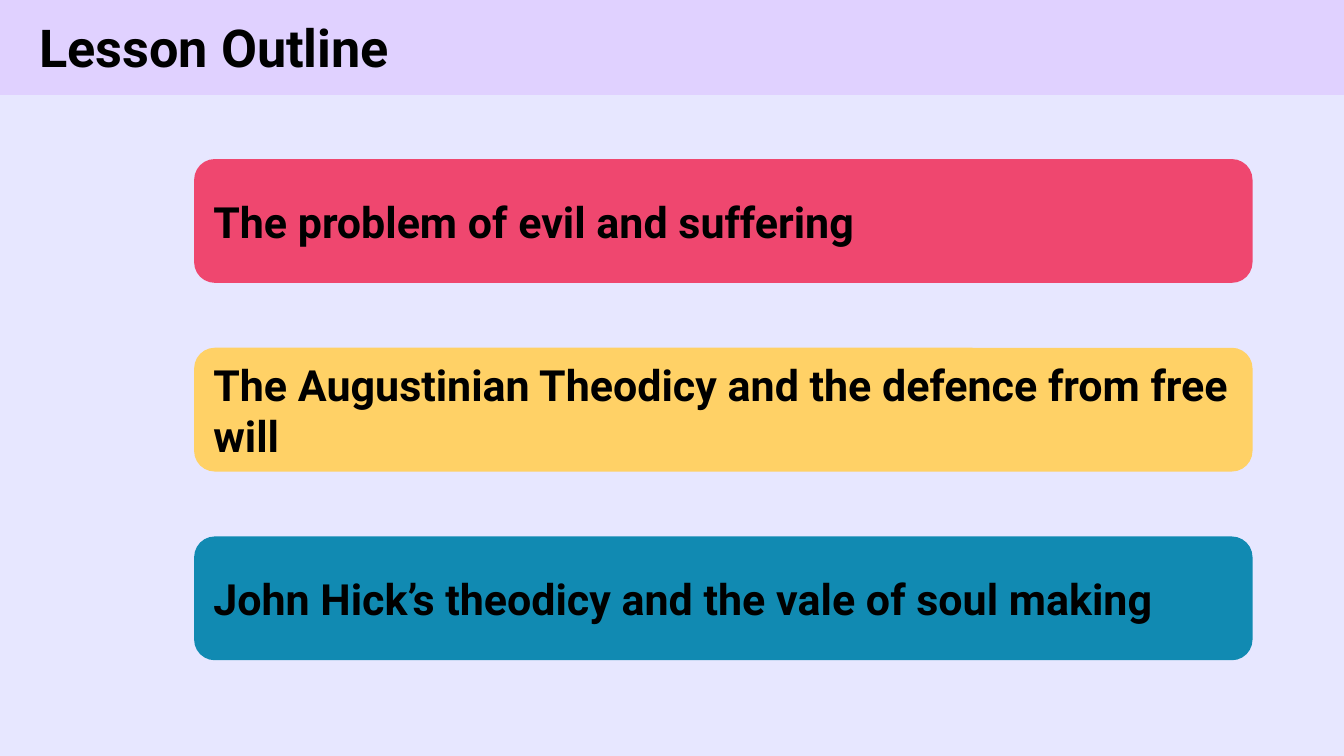
from pptx import Presentation
from pptx import util as u
from pptx.dml import color
from pptx.enum import shapes, text


def paint(fill, value):
    fill.solid()
    fill.fore_color.rgb = color.RGBColor.from_string(value)


def write(shape, words, size, left_inset):
    frame = shape.text_frame
    layout = {
        "word_wrap": True,
        "auto_size": text.MSO_AUTO_SIZE.NONE,
        "vertical_anchor": text.MSO_ANCHOR.MIDDLE,
        "margin_left": u.Pt(left_inset),
        "margin_top": u.Pt(9.4),
        "margin_right": u.Pt(9.4),
        "margin_bottom": u.Pt(9.4),
    }
    for name, value in layout.items():
        setattr(frame, name, value)
    para = frame.paragraphs[0]
    para.alignment = text.PP_ALIGN.LEFT
    span = para.add_run()
    span.text = words
    for name, value in {"name": "Roboto", "size": u.Pt(size), "bold": True}.items():
        setattr(span.font, name, value)
    paint(span.font.fill, "000000")


deck = Presentation()
deck.slide_width, deck.slide_height = u.Pt(960), u.Pt(540)
page = deck.slides.add_slide(deck.slide_layouts[5])
paint(page.background.fill, "E7E7FF")

# Title band across the top
title = page.shapes.title
band = {"left": 0, "top": -1.4, "width": 960, "height": 69.1}
for name, value in band.items():
    setattr(title, name, u.Pt(value))
paint(title.fill, "E0D1FF")
write(title, "Lesson Outline", 37.3, 28)

# Lesson topics, evenly stacked
topics = [
    ("The problem of evil and suffering", "EF476F"),
    ("The Augustinian Theodicy and the defence from free will", "FFD166"),
    ("John Hick’s theodicy and the vale of soul making", "118AB2"),
]
first_top, pitch = 113.6, 134.8
for row, (words, shade) in enumerate(topics):
    box = page.shapes.add_shape(
        shapes.MSO_SHAPE.ROUNDED_RECTANGLE,
        u.Pt(138.7), u.Pt(first_top + row * pitch), u.Pt(756), u.Pt(88.4),
    )
    box.adjustments[0] = 0.167
    box.shadow.inherit = False
    box.line.fill.background()
    paint(box.fill, shade)
    write(box, words, 30.7, 9.4)

deck.save("out.pptx")
